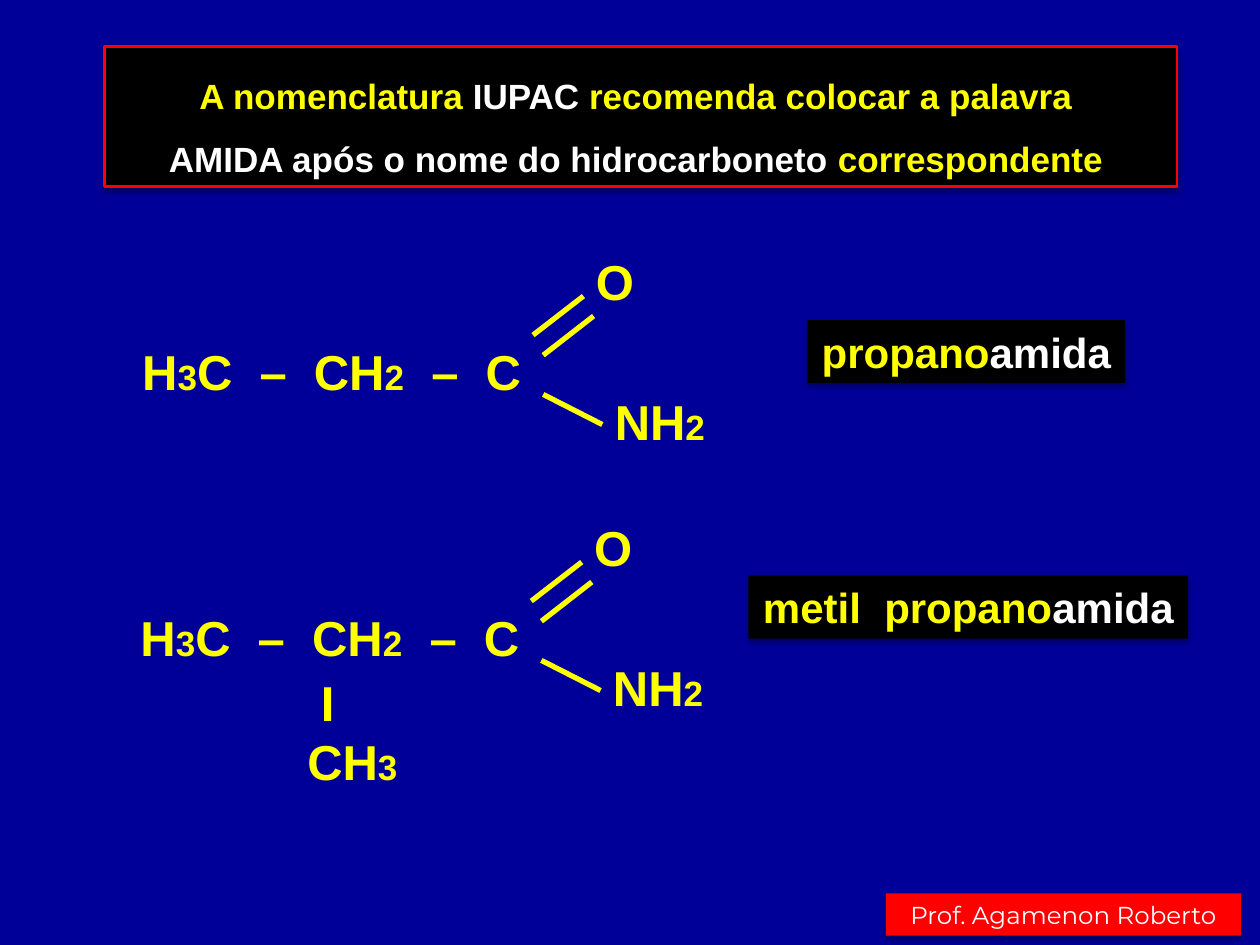
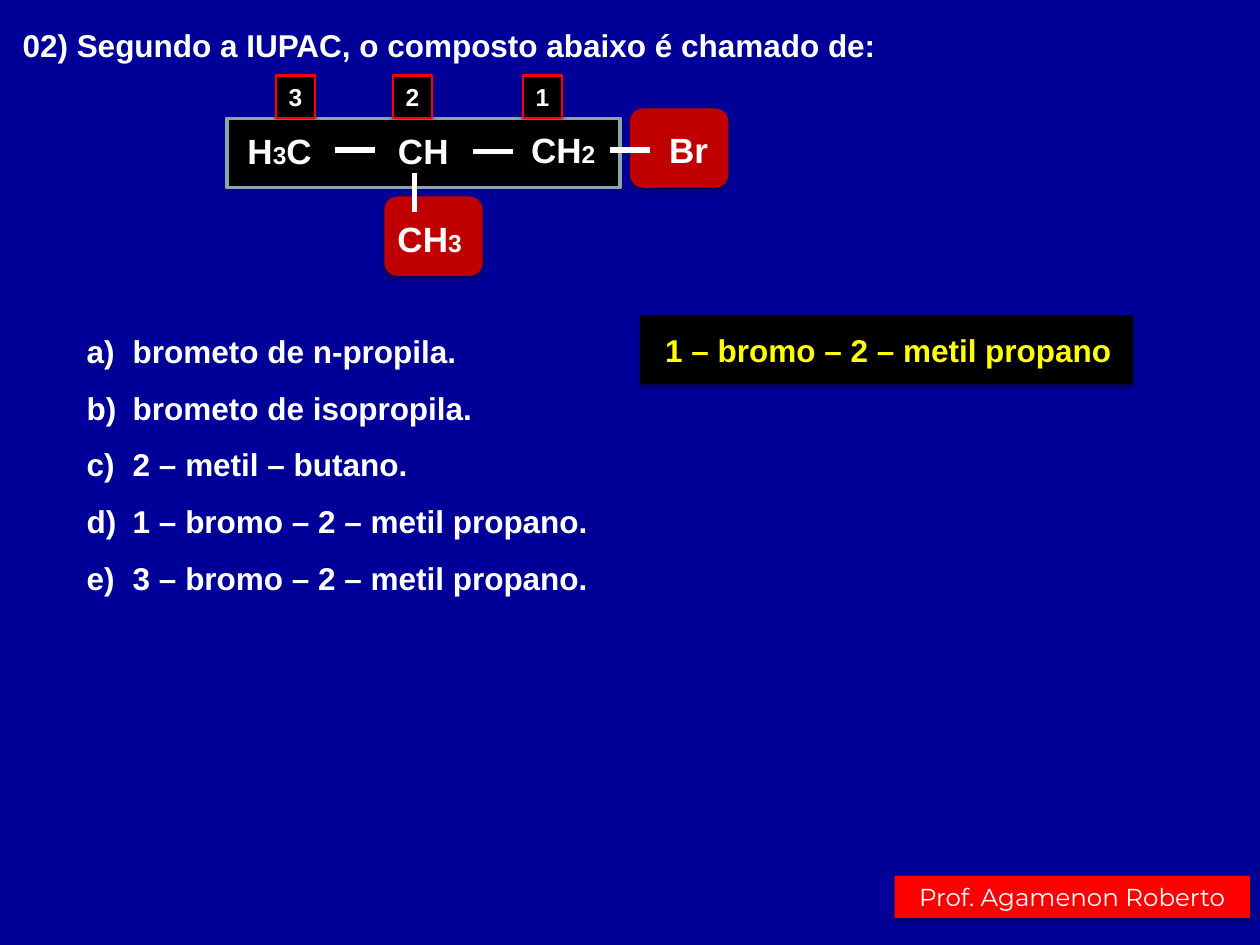
from itertools import groupby

from lxml.etree import SubElement
from pptx import Presentation
from pptx.dml.color import RGBColor
from pptx.enum.shapes import MSO_CONNECTOR, MSO_SHAPE
from pptx.enum.text import MSO_ANCHOR, MSO_AUTO_SIZE, PP_ALIGN
from pptx.oxml.ns import qn
from pptx.util import Pt

COLOURS = {
    "navy": "000099",
    "black": "000000",
    "white": "FFFFFF",
    "yellow": "FFFF00",
    "red": "FF0000",
    "dark_red": "C00000",
    "grey": "8AA6A8",
}


def colour(name):
    return RGBColor.from_string(COLOURS[name])


def formula(text, size, small):
    """Split a formula into spans, with its digits set smaller."""
    return [("".join(part), None, small if digit else size)
            for digit, part in groupby(text, str.isdigit)]


class Painter:
    """Holds the style and the page being drawn."""

    def __init__(self):
        self.deck = Presentation()
        self.deck.slide_width, self.deck.slide_height = Pt(720), Pt(540)
        self.page = None

    def new_page(self):
        self.page = self.deck.slides.add_slide(self.deck.slide_layouts[6])
        fill = self.page.background.fill
        fill.solid()
        fill.fore_color.rgb = colour("navy")

    def fill_text(self, shape, paragraphs, size=18, ink="white", font="Arial", bold=True,
                  align=PP_ALIGN.CENTER, spacing=None, anchor=MSO_ANCHOR.TOP, wrap=False,
                  hanging=0):
        """Each paragraph is a string or a list of (text, ink, size) spans."""
        frame = shape.text_frame
        frame.word_wrap = wrap
        frame.auto_size = MSO_AUTO_SIZE.SHAPE_TO_FIT_TEXT
        frame.vertical_anchor = anchor
        for index, spans in enumerate(paragraphs):
            para = frame.add_paragraph() if index else frame.paragraphs[0]
            para.alignment = align
            para.line_spacing = spacing
            para.font.name, para.font.size, para.font.bold = font, Pt(size), bold
            para.font.color.rgb = colour(ink)
            if hanging:
                properties = para._p.get_or_add_pPr()
                properties.set("marL", str(Pt(hanging)))
                properties.set("indent", str(-Pt(hanging)))
            if isinstance(spans, str):
                spans = [(spans, None, None)]
            for text, span_ink, span_size in spans:
                span = para.add_run()
                span.text = text
                if span_ink:
                    span.font.color.rgb = colour(span_ink)
                if span_size:
                    span.font.size = Pt(span_size)

    def text(self, left, top, width, height, paragraphs, **style):
        box = self.page.shapes.add_textbox(Pt(left), Pt(top), Pt(width), Pt(height))
        self.fill_text(box, paragraphs, **style)

    def panel(self, left, top, width, height, paragraphs=(), fill="black", line=None,
              line_width=1.5, kind=MSO_SHAPE.RECTANGLE, shadow=True, **style):
        box = self.page.shapes.add_shape(kind, Pt(left), Pt(top), Pt(width), Pt(height))
        box.shadow.inherit = False
        box.fill.solid()
        box.fill.fore_color.rgb = colour(fill)
        if line:
            box.line.color.rgb = colour(line)
            box.line.width = Pt(line_width)
        else:
            box.line.fill.background()
        if shadow:
            self.drop_shadow(box)
        if paragraphs:
            self.fill_text(box, paragraphs, **style)

    def drop_shadow(self, box):
        effects = box._element.spPr.find(qn("a:effectLst"))
        outer = SubElement(effects, qn("a:outerShdw"), blurRad=str(Pt(3.1)),
                           dist=str(Pt(1.8)), dir="5400000", rotWithShape="0")
        ink = SubElement(outer, qn("a:srgbClr"), val=COLOURS["black"])
        SubElement(ink, qn("a:alpha"), val="35000")

    def bond(self, x1, y1, x2, y2, ink):
        line = self.page.shapes.add_connector(
            MSO_CONNECTOR.STRAIGHT, Pt(x1), Pt(y1), Pt(x2), Pt(y2))
        line.line.color.rgb = colour(ink)
        line.line.width = Pt(3)
        SubElement(line._element.spPr, qn("a:effectLst"))

    def amide(self, left, top):
        """Carbon chain ending in C(=O)NH2."""
        for text, x, y, width in (("H3C  –  CH2  –  C", 0, 51.1, 233.3),
                                  ("O", 259.2, 0, 36), ("NH2", 270, 79.7, 66.2)):
            self.text(left + x, top + y, width, 41, [formula(text, 28, 20)],
                      size=28, ink="yellow", align=PP_ALIGN.LEFT)
        for x1, y1, x2, y2 in ((259.2, 28.8, 230.4, 51.1), (265, 40.2, 236.2, 62.6),
                               (270, 102.2, 236.2, 85)):
            self.bond(left + x1, top + y1, left + x2, top + y2, "yellow")

    def amide_name(self, left, top, width, stem):
        self.panel(left, top, width, 36, [[(stem, "yellow", None), ("amida", None, None)]], size=24)

    def author(self, left, top):
        self.panel(left, top, 203, 24.2, ["Prof. Agamenon Roberto"], fill="red",
                   size=14, font="Montserrat", bold=False)


def draw_amides(painter):
    painter.new_page()
    # Naming rule
    painter.panel(59.8, 26.6, 612.7, 80, [
        [("A nomenclatura ", None, None), ("IUPAC", "white", None),
         (" recomenda colocar a palavra ", None, None)],
        [("AMIDA após o nome do hidrocarboneto ", "white", None),
         ("correspondente ", None, None)],
    ], line="red", size=20, ink="yellow", spacing=1.5, anchor=MSO_ANCHOR.MIDDLE, wrap=True)
    # Propanamide
    painter.amide(74.2, 140.4)
    painter.amide_name(461.5, 182.9, 181.4, "propano")
    # Methyl propanamide, with its branch
    painter.amide(73.2, 292.4)
    painter.text(168.5, 380.9, 66.2, 74.2, [" I", formula("CH3", 28, 20)],
                 size=28, ink="yellow", align=PP_ALIGN.LEFT)
    painter.amide_name(427.7, 329, 251.3, "metil  propano")
    painter.author(506.2, 510.5)


def draw_question(painter):
    painter.new_page()
    # Substituents and main chain
    for left, top in ((360, 61.9), (219.6, 112.3)):
        painter.panel(left, top, 56.2, 45.4, fill="dark_red", kind=MSO_SHAPE.ROUNDED_RECTANGLE)
    painter.panel(129.6, 67.7, 224.6, 39.6, line="grey", line_width=2, shadow=False)
    # Question and options
    painter.text(5.8, 11.5, 506.9, 28.8,
                 ["02) Segundo a IUPAC, o composto abaixo é chamado de:"],
                 align=PP_ALIGN.LEFT, anchor=MSO_ANCHOR.MIDDLE)
    options = ("brometo de n-propila.", "brometo de isopropila.", "2 – metil – butano.",
               "1 – bromo – 2 – metil propano.", "3 – bromo – 2 – metil propano.")
    painter.text(42.5, 176.4, 304.6, 167,
                 [f"{letter})\t{option}" for letter, option in zip("abcde", options)],
                 align=PP_ALIGN.LEFT, spacing=1.5, anchor=MSO_ANCHOR.MIDDLE,
                 wrap=True, hanging=26.3)
    # Atoms and bonds
    for text, left, top, width in (("H3C", 133.9, 70.6, 51.8), ("CH", 219.6, 70.6, 44.6),
                                   ("CH2", 295.9, 69.8, 51.8), ("CH3", 219.6, 121, 51.8),
                                   ("Br", 375.1, 69.8, 36.7)):
        painter.text(left, top, width, 31.7, [formula(text, 20, 14)], size=20)
    for left, top in ((191.5, 85.7), (270, 86.4), (348.5, 85.7)):
        painter.bond(left, top, left + 23, top, "white")
    painter.bond(236.9, 98.6, 236.9, 121, "white")
    # Carbon numbers
    for number, left in (("1", 298.8), ("2", 224.6), ("3", 157.7)):
        painter.panel(left, 43.2, 22.3, 24.3, [number], line="red", size=14)
    # Answer
    painter.panel(365.8, 180, 281.5, 39.6)
    painter.text(371.5, 185.8, 272.2, 28.8, ["1 – bromo – 2 – metil propano"], ink="yellow")
    painter.author(511.2, 500.4)


def main():
    painter = Painter()
    draw_amides(painter)
    draw_question(painter)
    painter.deck.save("out.pptx")


if __name__ == "__main__":
    main()
